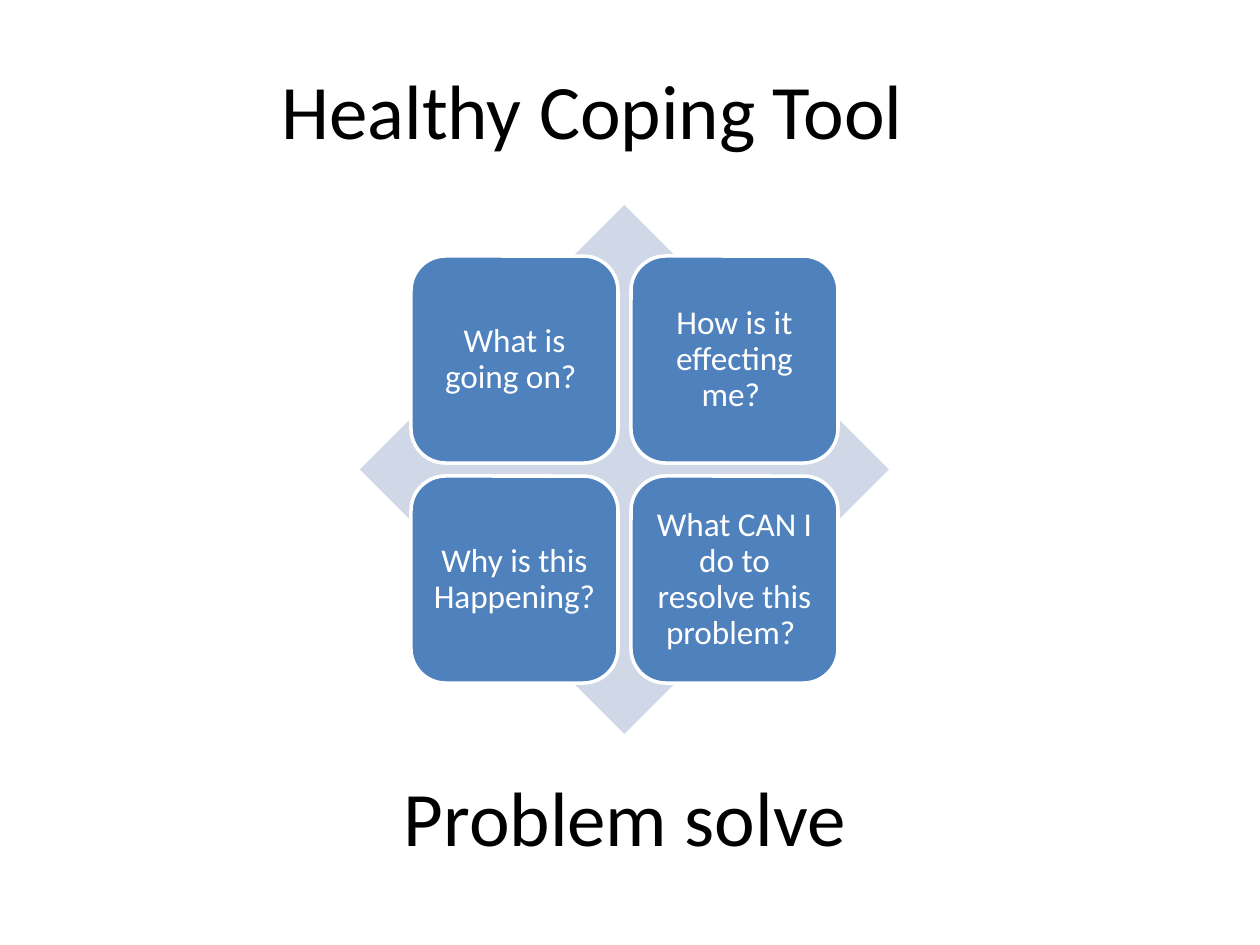
from pptx import Presentation
from pptx.dml.color import RGBColor
from pptx.enum.shapes import MSO_SHAPE
from pptx.enum.text import MSO_ANCHOR, PP_ALIGN
from pptx.util import Pt

PX = 914400 / 126
DIAMOND, CARD = MSO_SHAPE.DIAMOND, MSO_SHAPE.ROUNDED_RECTANGLE
MIDDLE, CENTER = MSO_ANCHOR.MIDDLE, PP_ALIGN.CENTER
COLORS = {"text": "000000", "diamond": "D0D8E8", "card": "4F81BD", "white": "FFFFFF"}
QUESTIONS = [
    "What is going on? ",
    "How is it effecting me? ",
    "Why is this Happening?",
    "What CAN I do to resolve this problem? ",
]


def px(n):
    return round(n * PX)


def rgb(name):
    return RGBColor.from_string(COLORS[name])


def place(sp, box):
    for name, value in zip(("left", "top", "width", "height"), box):
        setattr(sp, name, px(value))


def write(sp, text, size, color, **frame):
    """Set centred text; frame holds extra text frame settings."""
    tf = sp.text_frame
    for name, value in {"word_wrap": True, "vertical_anchor": MIDDLE, **frame}.items():
        setattr(tf, name, value)
    p = tf.paragraphs[0]
    p.alignment = CENTER
    r = p.add_run()
    r.text = text
    for name, value in {"name": "Calibri", "size": Pt(size)}.items():
        setattr(r.font, name, value)
    r.font.color.rgb = rgb(color)
    return p


def add_filled(shapes, kind, box, fill):
    sp = shapes.add_shape(kind, *map(px, box))
    sp.shadow.inherit = False
    sp.fill.solid()
    sp.fill.fore_color.rgb = rgb(fill)
    sp.line.fill.background()
    return sp


def add_heading(sp, box, text):
    place(sp, box)
    write(sp, text, 44, "text")


def add_matrix(slide, box, questions):
    """Draw a diamond behind a two by two grid of question cards."""
    x, y, w, h = box
    shapes = slide.shapes.add_group_shape().shapes
    add_filled(shapes, DIAMOND, box, "diamond")
    inset, side, inner = 51, 207, 10
    pitch = w - 2 * inset - side
    for i, question in enumerate(questions):
        row, col = divmod(i, 2)
        card = (x + inset + col * pitch, y + inset + row * pitch, side, side)
        sp = add_filled(shapes, CARD, card, "card")
        sp.line.color.rgb = rgb("white")
        sp.line.width = Pt(2)
        margins = {f"margin_{edge}": px(inner) for edge in ("left", "top", "right", "bottom")}
        p = write(sp, question, 19, "white", **margins)
        p.line_spacing = 0.9


def main():
    prs = Presentation()
    prs.slide_width, prs.slide_height = px(1260), px(945)
    s = prs.slides.add_slide(prs.slide_layouts[5])
    add_heading(s.shapes.title, (34, 30, 1134, 158), "Healthy Coping Tool ")
    add_matrix(s, (360, 205, 529, 529), QUESTIONS)
    add_heading(s.shapes.add_textbox(0, 0, 0, 0), (58, 737, 1134, 158), "Problem solve")
    prs.save("out.pptx")


if __name__ == "__main__":
    main()
